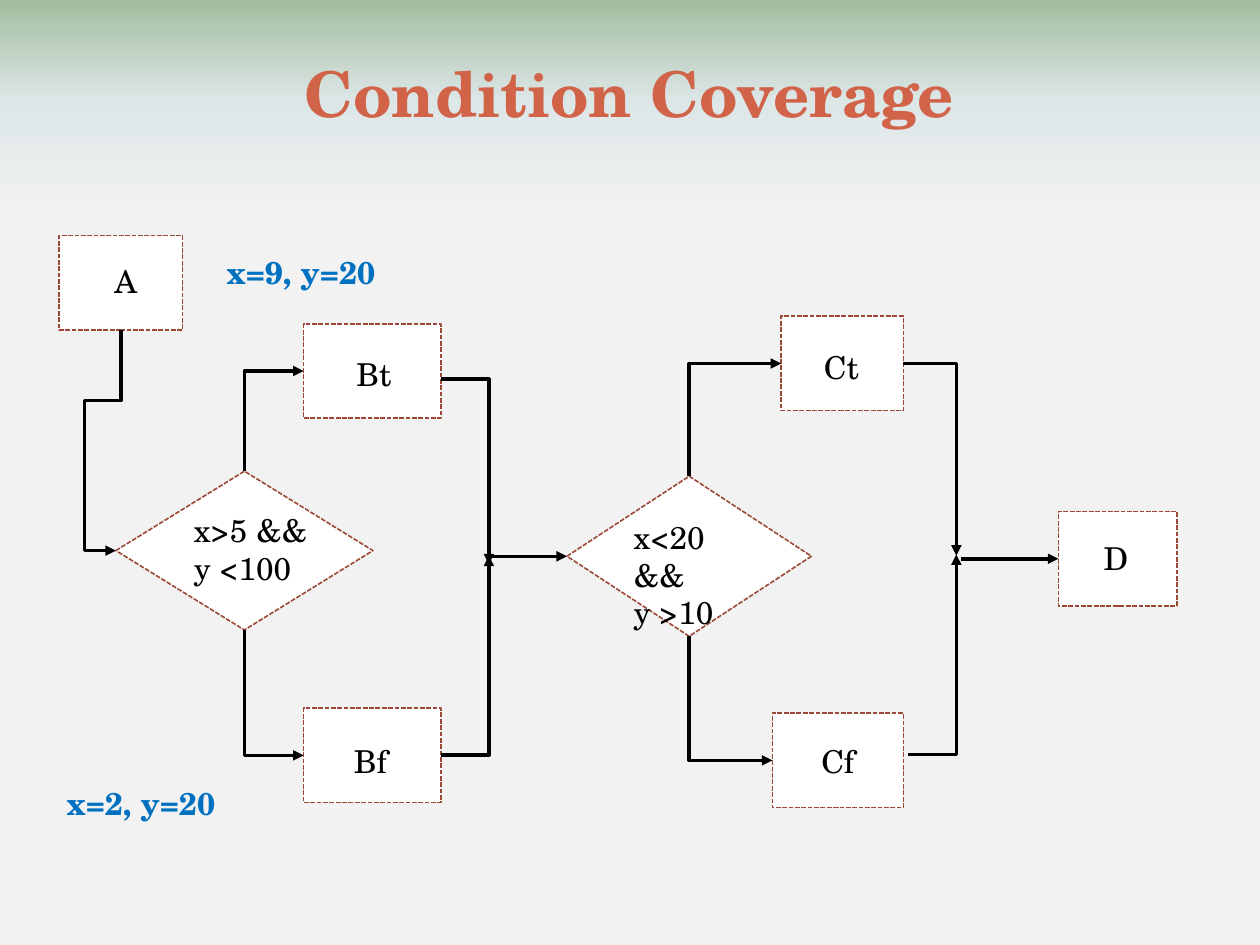
import pptx
import pptx.dml.color
import pptx.enum.dml
import pptx.enum.shapes
import pptx.enum.text
import pptx.oxml
import pptx.oxml.ns
import pptx.util
import lxml.etree

RGB = pptx.dml.color.RGBColor
RUST = RGB(0xD1, 0x63, 0x49)
BROWN = RGB(0x9B, 0x49, 0x36)
BLUE = RGB(0x00, 0x70, 0xC0)
BLACK = RGB(0x00, 0x00, 0x00)
WHITE = RGB(0xFF, 0xFF, 0xFF)
BACKDROP = [(77, RGB(0xF2, 0xF2, 0xF2)), (89, RGB(0xDE, 0xE7, 0xE8)),
            (100, RGB(0xA2, 0xBD, 0xA0))]
FONT = "TeX Gyre Schola"

# Columns and rows of the flow, in inches
B_LEFT, B_WIDTH = 2.41, 1.09
C_RIGHT = 7.17
B_JOIN, C_JOIN = 3.88, 7.59
BOX_HEIGHT, LABEL_HEIGHT = 0.75, 0.4
LABEL_ROW_FALSE = 5.84

# name: left, top, width, height
BOXES = {
    "A": (0.47, 1.87, 0.98, BOX_HEIGHT),
    "Bt": (B_LEFT, 2.57, B_WIDTH, BOX_HEIGHT),
    "Bf": (B_LEFT, 5.62, B_WIDTH, BOX_HEIGHT),
    "Ct": (6.2, 2.51, C_RIGHT - 6.2, BOX_HEIGHT),
    "Cf": (6.13, 5.66, C_RIGHT - 6.13, BOX_HEIGHT),
    "D": (8.4, 4.06, 0.94, BOX_HEIGHT),
}
DECISIONS = {"B": (0.92, 3.74, 2.04, 1.26), "C": (4.5, 3.78, 1.94, 1.27)}
NODES = {**BOXES, **DECISIONS}

# box name: left, top, width of its label
LABELS = {
    "A": (0.81, 2.03, 0.42),
    "Bt": (2.73, 2.77, 0.52),
    "Bf": (2.71, LABEL_ROW_FALSE, 0.5),
    "Ct": (6.44, 2.71, 0.5),
    "Cf": (6.42, LABEL_ROW_FALSE, 0.54),
    "D": (8.66, 4.23, 0.42),
}
CONDITIONS = [(["x>5 &&", "y <100"], 1.44, 4.01), (["x<20 &&", "y >10"], 4.93, 4.06)]
TEST_VALUES = [("x=9, y=20", 1.7, 1.96), ("x=2, y=20", 0.43, 6.17)]


def inches(*lengths):
    return [pptx.util.Inches(length) for length in lengths]


def side(name, across, down):
    """Point of a node, given as shares of its width and height."""
    left, top, width, height = NODES[name]
    return left + across * width, top + down * height


def apply_format(target, values):
    for name, value in values.items():
        setattr(target, name, value)


def add_text(frame, lines, color, size=18, bold=False):
    for index, line in enumerate(lines):
        para = frame.paragraphs[0] if index == 0 else frame.add_paragraph()
        span = para.add_run()
        span.text = line
        apply_format(span.font, {"name": FONT, "size": pptx.util.Pt(size), "bold": bold})
        span.font.color.rgb = color


def set_background(page):
    fill = page.background.fill
    fill.gradient()
    fill.gradient_angle = 90
    stops = page.element.find(".//" + pptx.oxml.ns.qn("a:gsLst"))
    for stop in list(stops):
        stops.remove(stop)
    for share, color in BACKDROP:
        stop = lxml.etree.SubElement(stops, pptx.oxml.ns.qn("a:gs"), pos=str(share * 1000))
        lxml.etree.SubElement(stop, pptx.oxml.ns.qn("a:srgbClr"), val=str(color))


def add_title(page, text):
    title = page.shapes.title
    left, top, width, height = inches(0.33, 0.25, 9.33, 0.83)
    apply_format(title, {"left": left, "top": top, "width": width, "height": height})
    title.text_frame.vertical_anchor = pptx.enum.text.MSO_ANCHOR.BOTTOM
    add_text(title.text_frame, [text], RUST, size=36, bold=True)
    title.text_frame.paragraphs[0].alignment = pptx.enum.text.PP_ALIGN.CENTER


def add_node(page, kind, area):
    node = page.shapes.add_shape(kind, *inches(*area))
    node.shadow.inherit = False
    node.fill.solid()
    node.fill.fore_color.rgb = WHITE
    node.line.color.rgb = BROWN
    apply_format(node.line, {"width": pptx.util.Pt(0.9),
                             "dash_style": pptx.enum.dml.MSO_LINE.SQUARE_DOT})


def add_label(page, lines, left, top, width, color=BLACK, bold=False):
    height = LABEL_HEIGHT if len(lines) == 1 else 0.71
    box = page.shapes.add_textbox(*inches(left, top, width, height))
    apply_format(box.text_frame, {
        "word_wrap": True, "auto_size": pptx.enum.text.MSO_AUTO_SIZE.SHAPE_TO_FIT_TEXT})
    add_text(box.text_frame, lines, color, bold=bold)


def add_arrow(page, start, end, preset="line", turn=0, adjust=()):
    """Arrow whose preset path is turned clockwise by 0, 90 or 270 degrees."""
    center_x, center_y = (start[0] + end[0]) / 2, (start[1] + end[1]) / 2
    off_x, off_y = start[0] - center_x, start[1] - center_y
    off_x, off_y = {0: (off_x, off_y), 90: (off_y, -off_x), 270: (-off_y, off_x)}[turn]
    arrow = page.shapes.add_connector(
        pptx.enum.shapes.MSO_CONNECTOR.STRAIGHT,
        *inches(center_x + off_x, center_y + off_y, center_x - off_x, center_y - off_y))
    arrow.line.color.rgb = BLACK
    arrow.line.width = pptx.util.Pt(2)

    qn = pptx.oxml.ns.qn
    properties = arrow._element.spPr
    if turn:
        properties.find(qn("a:xfrm")).set("rot", str(turn * 60000))
    geometry = properties.find(qn("a:prstGeom"))
    geometry.set("prst", preset)
    for index, share in enumerate(adjust, 1):
        lxml.etree.SubElement(geometry.find(qn("a:avLst")), qn("a:gd"),
                              name=f"adj{index}", fmla=f"val {round(share * 100000)}")
    lxml.etree.SubElement(properties.find(qn("a:ln")), qn("a:tailEnd"), type="triangle")
    lxml.etree.SubElement(properties, qn("a:effectLst"))


def add_branch(page, decision, outcome, down):
    """Leave the top (0) or bottom (1) of a decision and enter a box from the left."""
    add_arrow(page, side(decision, 0.5, down), side(outcome, 0, 0.5),
              "bentConnector2", turn=270 if down else 90)


def add_merge(page, start, end):
    add_arrow(page, start, end, "bentConnector2")


def add_flow(page):
    start, end = side("A", 0.5, 1), side("B", 0, 0.5)
    detour = (start[0] - 0.67) / (start[0] - end[0])
    add_arrow(page, start, end, "bentConnector4", turn=90, adjust=(0.32, detour))
    for decision in DECISIONS:
        add_branch(page, decision, decision + "t", 0)
        add_branch(page, decision, decision + "f", 1)
    add_merge(page, (B_LEFT + B_WIDTH, 3.01), (B_JOIN, 4.48))
    add_merge(page, side("Bf", 1, 0.5), (B_JOIN, 4.41))
    add_merge(page, side("Ct", 1, 0.5), (C_JOIN, 4.41))
    add_merge(page, (7.21, 5.99), (C_JOIN, 4.4))
    for join, target in ((B_JOIN, "C"), (C_JOIN + 0.04, "D")):
        entry = side(target, 0, 0.5)
        add_arrow(page, (join, entry[1]), entry)


def main():
    deck = pptx.Presentation()
    deck.slide_width, deck.slide_height = inches(10, 7.5)
    page = deck.slides.add_slide(deck.slide_layouts[5])
    set_background(page)
    add_title(page, "Condition Coverage")
    shapes = pptx.enum.shapes.MSO_SHAPE
    for area in BOXES.values():
        add_node(page, shapes.RECTANGLE, area)
    for area in DECISIONS.values():
        add_node(page, shapes.FLOWCHART_DECISION, area)
    add_flow(page)
    for name, place in LABELS.items():
        add_label(page, [name], *place)
    for lines, left, top in CONDITIONS:
        add_label(page, lines, left, top, 1.21)
    for text, left, top in TEST_VALUES:
        add_label(page, [text], left, top, 1.51, BLUE, bold=True)
    deck.save("out.pptx")


if __name__ == "__main__":
    main()
